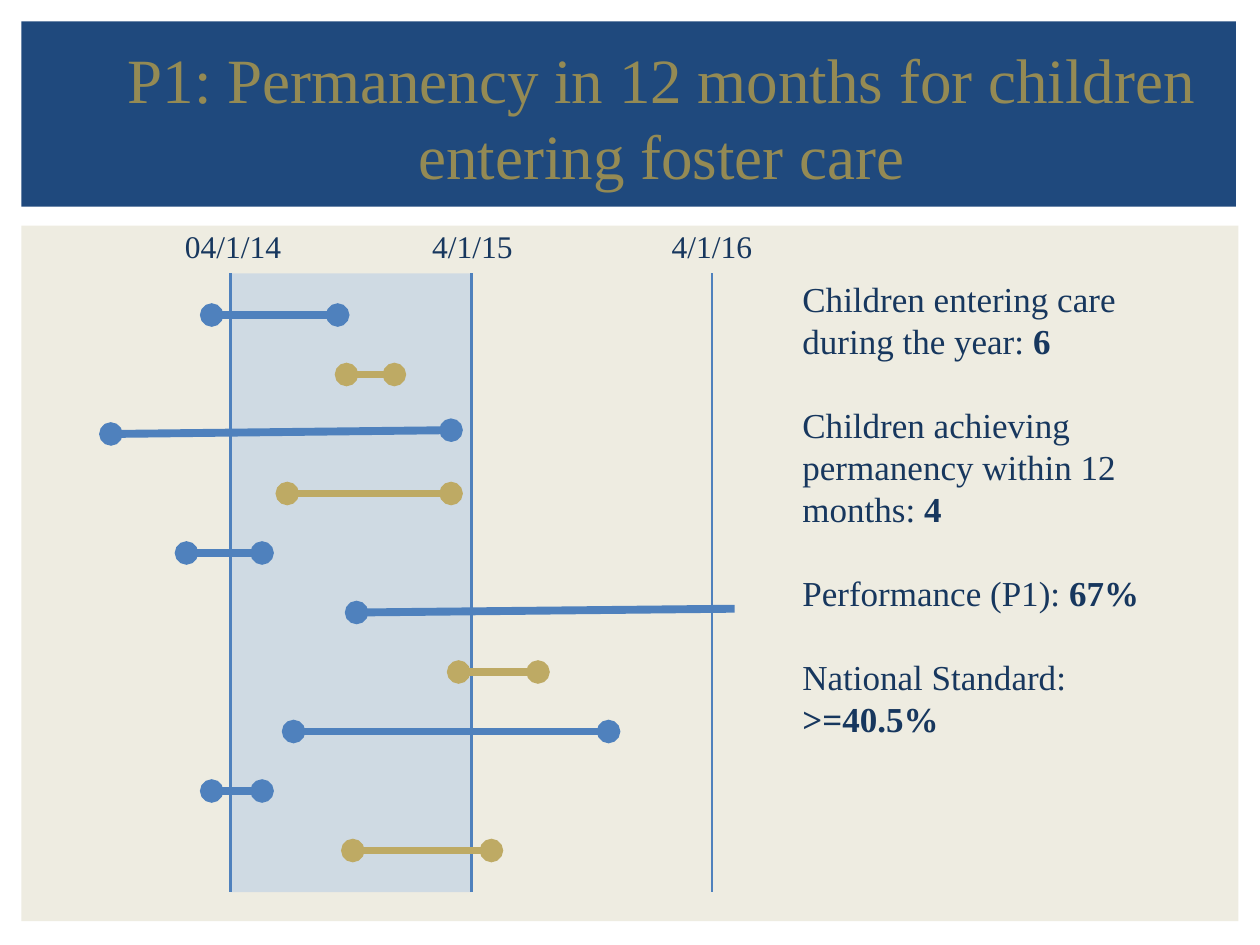
from dataclasses import dataclass

from lxml import etree
from pptx import Presentation
from pptx.dml.color import RGBColor
from pptx.enum import shapes, text
from pptx.oxml.ns import qn
from pptx.util import Inches, Pt


@dataclass(frozen=True)
class Theme:
    font: str = "Times New Roman"
    banner: str = "1F497D"
    panel: str = "EEECE1"
    title: str = "948A54"
    body: str = "17375E"
    period: str = "B9CDE5"
    blue: str = "4F81BD"
    gold: str = "BEAA64"
    title_size: int = 36
    label_size: int = 18
    body_size: int = 20
    period_opacity: int = 57
    marker_width: float = 1.5
    episode_width: float = 4.5


@dataclass(frozen=True)
class DateMarker:
    label: str
    x: float
    label_center: float


@dataclass(frozen=True)
class Episode:
    """One stay in care, from start to end along the time axis."""
    start: float
    end: float
    color: str
    rise: float = 0
    closed: bool = True


@dataclass(frozen=True)
class Fact:
    label: str
    value: str


THEME = Theme()
AXIS_TOP, AXIS_BOTTOM = 2.17, 7.08
FIRST_ROW, LAST_ROW = 2.5, 6.75

MARKERS = [
    DateMarker("04/1/14", 1.83, 1.85),
    DateMarker("4/1/15", 3.74, 3.75),
    DateMarker("4/1/16", 5.65, 5.65),
]
EPISODES = [
    Episode(1.68, 2.68, THEME.blue),
    Episode(2.75, 3.13, THEME.gold),
    Episode(0.88, 3.58, THEME.blue, rise=0.03),
    Episode(2.28, 3.58, THEME.gold),
    Episode(1.48, 2.08, THEME.blue),
    Episode(2.83, 5.83, THEME.blue, rise=0.03, closed=False),
    Episode(3.64, 4.27, THEME.gold),
    Episode(2.33, 4.83, THEME.blue),
    Episode(1.68, 2.08, THEME.blue),
    Episode(2.8, 3.9, THEME.gold),
]
FACTS = [
    Fact("Children entering care during the year: ", "6"),
    Fact("Children achieving permanency within 12 months: ", "4"),
    Fact("Performance (P1): ", "67%"),
    Fact("National Standard: ", ">=40.5%"),
]


def add_box(slide, left: float, top: float, width: float, height: float,
            color: str, opacity: int = 100):
    shape = slide.shapes.add_shape(
        shapes.MSO_SHAPE.RECTANGLE,
        Inches(left), Inches(top), Inches(width), Inches(height))
    shape.shadow.inherit = False
    shape.line.fill.background()
    shape.fill.solid()
    shape.fill.fore_color.rgb = RGBColor.from_string(color)
    if opacity < 100:
        fill_color = shape.element.spPr.find(qn("a:solidFill"))[0]
        alpha = etree.SubElement(fill_color, qn("a:alpha"))
        alpha.set("val", str(opacity * 1000))
    return shape


def add_line(slide, start: tuple[float, float], end: tuple[float, float],
             color: str, width: float, head: bool = False, tail: bool = False):
    """Draw a line, with a round dot at its head (start) and tail (end) if asked."""
    connector = slide.shapes.add_connector(
        shapes.MSO_CONNECTOR.STRAIGHT, *map(Inches, (*start, *end)))
    connector.line.color.rgb = RGBColor.from_string(color)
    connector.line.width = Pt(width)
    properties = connector.element.spPr
    for tag, wanted in (("a:headEnd", head), ("a:tailEnd", tail)):
        if wanted:
            line = properties.find(qn("a:ln"))
            etree.SubElement(line, qn(tag)).set("type", "oval")
    etree.SubElement(properties, qn("a:effectLst"))
    return connector


def add_text(slide, left: float, top: float, width: float, height: float,
             paragraphs: list[list[tuple[str, bool]]], *, size: int,
             color: str = THEME.body, align=text.PP_ALIGN.LEFT,
             anchor=text.MSO_ANCHOR.TOP, wrap: bool = True,
             left_margin: float = 0.1, gap: float = 0):
    """Write paragraphs made of (wording, bold) pieces, gap points apart."""
    box = slide.shapes.add_textbox(
        Inches(left), Inches(top), Inches(width), Inches(height))
    frame = box.text_frame
    frame.word_wrap = wrap
    frame.vertical_anchor = anchor
    frame.margin_left = Inches(left_margin)
    for index, pieces in enumerate(paragraphs):
        paragraph = frame.add_paragraph() if index else frame.paragraphs[0]
        paragraph.alignment = align
        if index:
            paragraph.space_before = Pt(gap)
        for wording, bold in pieces:
            run = paragraph.add_run()
            run.text = wording
            run.font.name = THEME.font
            run.font.size = Pt(size)
            run.font.bold = bold
            run.font.color.rgb = RGBColor.from_string(color)
    return box


def add_marker(slide, marker: DateMarker):
    add_line(slide, (marker.x, AXIS_TOP), (marker.x, AXIS_BOTTOM),
             THEME.blue, THEME.marker_width)
    width = 1
    add_text(slide, marker.label_center - width / 2, 1.75, width, 0.4,
             [[(marker.label, False)]], size=THEME.label_size,
             align=text.PP_ALIGN.CENTER, wrap=False)


def add_episode(slide, episode: Episode, y: float):
    add_line(slide, (episode.start, y), (episode.end, y - episode.rise),
             episode.color, THEME.episode_width, head=True, tail=episode.closed)


def main():
    presentation = Presentation()
    presentation.slide_width, presentation.slide_height = Inches(10), Inches(7.5)
    slide = presentation.slides.add_slide(presentation.slide_layouts[6])

    add_box(slide, 0.17, 1.79, 9.66, 5.52, THEME.panel)
    add_box(slide, 0.17, 0.17, 9.64, 1.47, THEME.banner)
    title = "P1: Permanency in 12 months for children entering foster care"
    add_text(slide, 0, 0.3, 10, 1.25, [[(title, False)]],
             size=THEME.title_size, color=THEME.title,
             align=text.PP_ALIGN.CENTER, anchor=text.MSO_ANCHOR.MIDDLE,
             left_margin=0.6)

    period_start, period_end = MARKERS[0].x, MARKERS[1].x
    add_box(slide, period_start, AXIS_TOP, period_end - period_start,
            AXIS_BOTTOM - AXIS_TOP, THEME.period, THEME.period_opacity)
    for marker in MARKERS:
        add_marker(slide, marker)

    row_gap = (LAST_ROW - FIRST_ROW) / (len(EPISODES) - 1)
    for row, episode in enumerate(EPISODES):
        add_episode(slide, episode, FIRST_ROW + row * row_gap)

    add_text(slide, 6.27, 2.15, 2.9, 3.8,
             [[(fact.label, False), (fact.value, True)] for fact in FACTS],
             size=THEME.body_size, gap=24)

    presentation.save("out.pptx")


if __name__ == "__main__":
    main()
